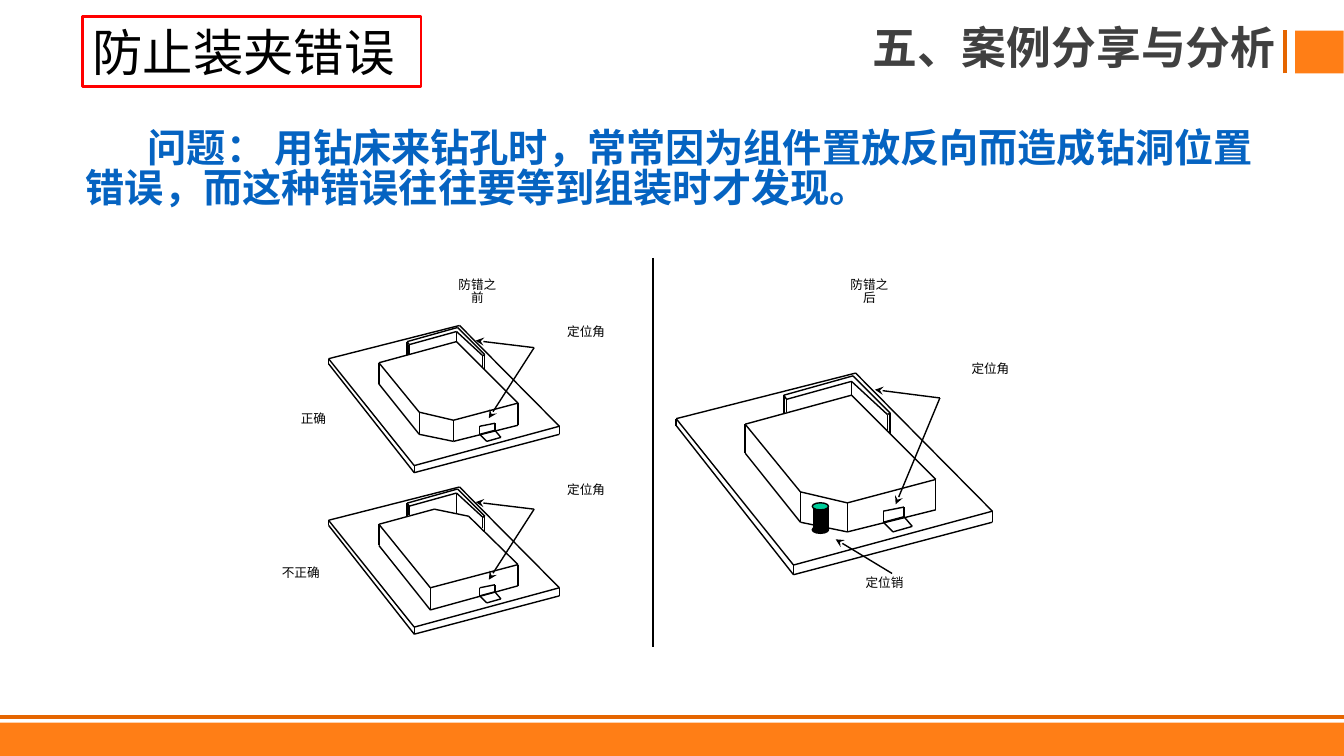
from itertools import pairwise

from lxml.etree import SubElement
from pptx import Presentation
from pptx.dml.color import RGBColor
from pptx.enum.shapes import MSO_CONNECTOR, MSO_SHAPE
from pptx.enum.text import MSO_ANCHOR, PP_ALIGN
from pptx.oxml.ns import qn
from pptx.util import Cm, Pt

FONT = "Noto Sans CJK SC"
HUES = {
    "black": "000000",
    "gray": "404040",
    "blue": "0563C1",
    "red": "FF0000",
    "orange": "FF7E16",
    "rust": "E56500",
    "green": "00CC99",
}

# Jig outlines in hundredths of an inch from the left corner of the plate
PLATE = [
    [(0, 0), (130, -33), (229, 67), (85, 106), (0, 0)],
    [(0, 0), (0, 5), (85, 113), (229, 75), (229, 67)],
    [(85, 106), (85, 113)],
]
FENCE = [
    [(80, -5), (80, -14), (127, -27), (153, -3), (153, 8)],
    [(78, -4), (78, -17), (128, -31), (155, -4), (155, 11)],
    [(80, -14), (78, -17)],
    [(155, -4), (153, -3)],
]
CLIP = [
    [(150, 75), (150, 67), (165, 64), (165, 71), (171, 78), (157, 82), (150, 75)],
    [(150, 75), (165, 71)],
]
RIGHT = [
    [(50, 4), (127, -17), (188, 44), (124, 61), (90, 53), (50, 4)],
    [(50, 4), (50, 25), (90, 75), (124, 82), (188, 66), (188, 44)],
    [(90, 53), (90, 75)],
    [(124, 61), (124, 82)],
    [(127, -17), (127, -27)],
]
WRONG = [
    [(50, 4), (105, -11), (139, -4), (188, 44), (101, 67), (50, 4)],
    [(50, 4), (50, 25), (101, 89), (188, 65), (188, 44)],
    [(101, 67), (101, 89)],
    [(127, -7), (127, -27)],
]
NEAR = [(204, -11), (146, -18), (159, 59)]
FAR = [(191, -15), (144, -21), (159, 62)]
JIGS = [
    (8.28, 9.04, 1, RIGHT, NEAR),
    (8.28, 13.11, 1, WRONG, NEAR),
    (17.04, 10.55, 1.37, RIGHT, FAR),
]
LABELS = [
    ("防错之前", 11.28, 6.93, 1.5),
    ("防错之后", 21.16, 6.93, 1.5),
    ("正确", 6.77, 10.29, 2.26),
    ("不正确", 6.45, 14.17, 2.26),
    ("定位角", 13.64, 8.1, 2.26),
    ("定位角", 13.64, 12.09, 2.26),
    ("定位角", 23.83, 9.04, 2.26),
    ("定位销", 21.16, 14.43, 2.26),
]


def color(name):
    return RGBColor.from_string(HUES[name])


def apply(item, values):
    for key, value in values.items():
        setattr(item, key, value)


def place(shape, left, top, width, height):
    apply(shape, {"left": Cm(left), "top": Cm(top),
                  "width": Cm(width), "height": Cm(height)})


def write(shape, text, hue, font, para, frame):
    box = shape.text_frame
    apply(box, {"word_wrap": True, **frame})
    line = box.paragraphs[0]
    apply(line, para)
    run = line.add_run()
    run.text = text
    apply(run.font, {"name": FONT, **font})
    run.font.color.rgb = color(hue)
    SubElement(run.font._element, qn("a:ea")).set("typeface", FONT)


def stroke(slide, start, end, hue="black", width=1, arrow=False):
    ends = [Cm(v) for v in (*start, *end)]
    link = slide.shapes.add_connector(MSO_CONNECTOR.STRAIGHT, *ends)
    link.line.color.rgb = color(hue)
    link.line.width = Pt(width)
    if arrow:
        SubElement(link.line._get_or_add_ln(), qn("a:tailEnd")).set("type", "stealth")
    SubElement(link._element.spPr, qn("a:effectLst"))


def solid(slide, kind, area, fill=None, edge=None, width=1):
    shape = slide.shapes.add_shape(kind, *[Cm(v) for v in area])
    shape.shadow.inherit = False
    if fill:
        shape.fill.solid()
        shape.fill.fore_color.rgb = color(fill)
    else:
        shape.fill.background()
    if edge:
        shape.line.color.rgb = color(edge)
        shape.line.width = Pt(width)
    else:
        shape.line.fill.background()
    return shape


def label(slide, text, left, top, width):
    box = slide.shapes.add_textbox(Cm(left), Cm(top), Cm(width), Cm(1.04))
    write(box, text, "black", {"size": Pt(9)},
          {"alignment": PP_ALIGN.CENTER, "line_spacing": 0.82}, {})


def jig(slide, left, top, size, block, arrows):
    def spot(point):
        return tuple(start + v * size * 0.0254
                     for start, v in zip((left, top), point))

    for trace in PLATE + FENCE + CLIP + block:
        for start, end in pairwise(trace):
            stroke(slide, spot(start), spot(end))
    bend, *tips = arrows
    for tip in tips:
        stroke(slide, spot(bend), spot(tip), arrow=True)


def pin(slide):
    solid(slide, MSO_SHAPE.RECTANGLE, (20.5, 12.8, 0.38, 0.56), "black", "black")
    for top, fill in ((12.67, "green"), (13.26, "black")):
        solid(slide, MSO_SHAPE.OVAL, (20.47, top, 0.41, 0.18), fill, "black")
    stroke(slide, (22.48, 14.45), (21.06, 13.59), arrow=True)


def trim(slide):
    """Draw the orange bands at the foot and beside the heading."""
    for area in ((0, 18.21, 33.87, 0.84), (32.64, 0.77, 1.22, 1.08)):
        solid(slide, MSO_SHAPE.RECTANGLE, area, "orange")
    stroke(slide, (0, 18.06), (33.87, 18.06), "rust", 3)
    stroke(slide, (32.39, 1.85), (32.39, 0.76), "rust", 3)


def heads(slide):
    title, body = slide.placeholders
    place(title, 14.86, 0.66, 17.55, 1.09)
    write(title, "五、案例分享与分析", "gray", {"size": Pt(32), "bold": True},
          {"alignment": PP_ALIGN.RIGHT, "line_spacing": 0.9},
          {"vertical_anchor": MSO_ANCHOR.TOP, "margin_top": 0, "margin_bottom": 0})
    topic = solid(slide, MSO_SHAPE.RECTANGLE, (2.08, 0.41, 8.53, 1.78), None, "red", 2)
    write(topic, "防止装夹错误", "black", {"size": Pt(36)},
          {"alignment": PP_ALIGN.LEFT}, {"vertical_anchor": MSO_ANCHOR.MIDDLE})
    place(body, 1.91, 3.15, 30.51, 2.31)
    write(body, "问题： 用钻床来钻孔时，常常因为组件置放反向而造成钻洞位置错误，"
          "而这种错误往往要等到组装时才发现。",
          "blue", {"size": Pt(28), "bold": True},
          {"line_spacing": 0.86, "space_before": Pt(3)}, {})
    props = body.text_frame.paragraphs[0]._p.get_or_add_pPr()
    props.set("marL", "0")
    props.set("indent", str(Cm(1.56)))
    SubElement(props, qn("a:buNone"))


def main():
    deck = Presentation()
    apply(deck, {"slide_width": Cm(33.87), "slide_height": Cm(19.05)})
    slide = deck.slides.add_slide(deck.slide_layouts[1])
    trim(slide)
    heads(slide)
    for parts in JIGS:
        jig(slide, *parts)
    pin(slide)
    for parts in LABELS:
        label(slide, *parts)
    stroke(slide, (16.46, 6.5), (16.46, 16.31))
    deck.save("out.pptx")


if __name__ == "__main__":
    main()
